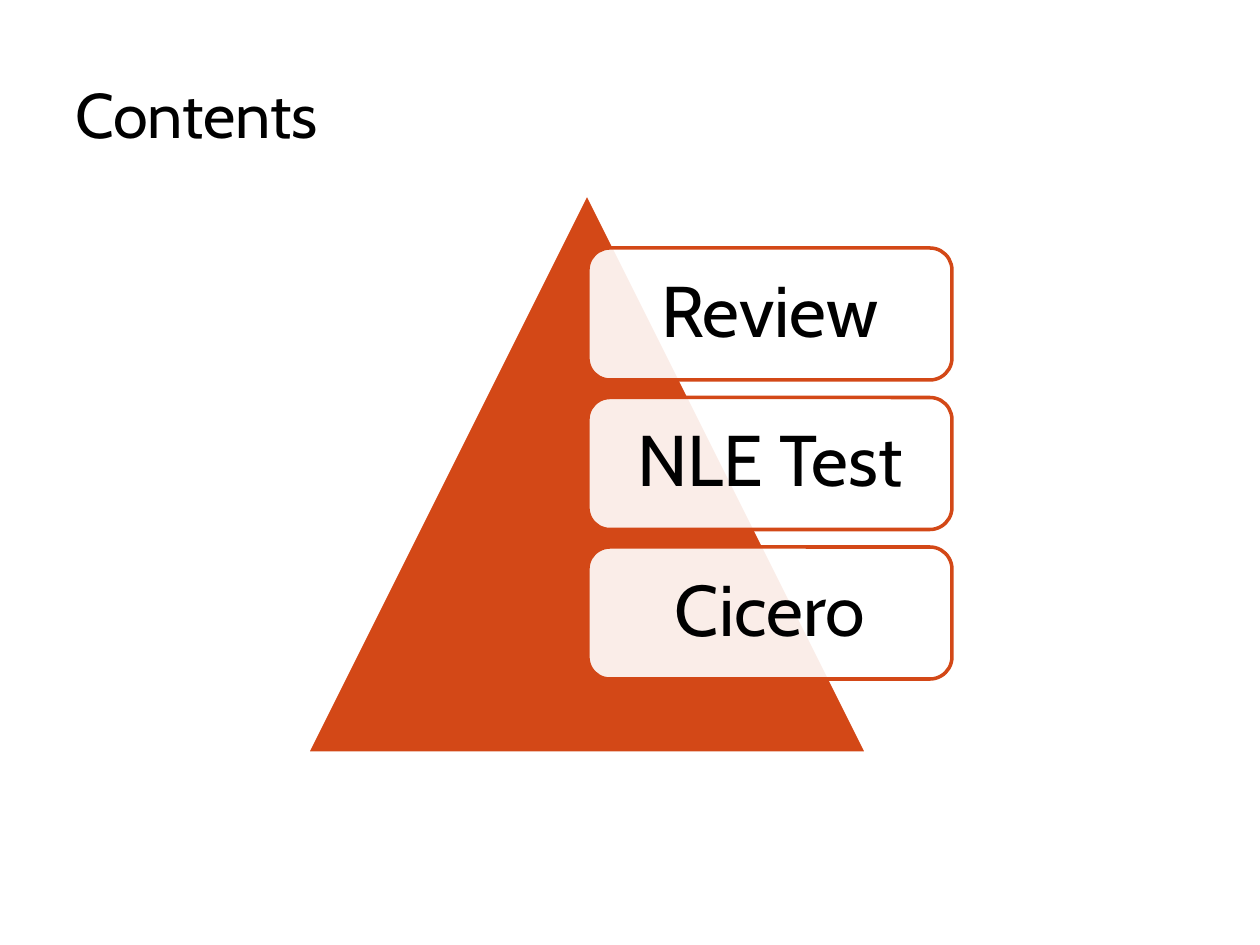
from dataclasses import dataclass

from lxml.etree import SubElement
from pptx import Presentation
from pptx.dml.color import RGBColor
from pptx.enum.shapes import MSO_SHAPE
from pptx.enum.text import MSO_ANCHOR, PP_ALIGN
from pptx.oxml.ns import qn
from pptx.util import Emu, Pt

TITLE = "Contents"
TOPICS = ["Review", "NLE Test", "Cicero"]

SLIDE_SIZE = (1260, 945)
TITLE_BOX = (63, 10, 935, 147)
TRIANGLE_BOX = (307, 193, 560, 560)
CARD_LEFT, CARD_WIDTH, CARD_HEIGHT = 588, 364, 132
CARDS_TOP, CARDS_BOTTOM = 248, 679
CARD_INSET = 28


@dataclass(frozen=True)
class Theme:
    font: str = "Cabin"
    text: RGBColor = RGBColor(0x00, 0x00, 0x00)
    paper: RGBColor = RGBColor(0xFF, 0xFF, 0xFF)
    accent: RGBColor = RGBColor(0xD3, 0x48, 0x17)
    title_size: int = 36
    topic_size: int = 41
    line_width: int = 2
    card_opacity: int = 90


THEME = Theme()


def px(length):
    return Emu(round(length * 914400 / 126))


def add_shape(slide, kind, box, fill, line):
    shape = slide.shapes.add_shape(kind, *map(px, box))
    shape.shadow.inherit = False
    shape.fill.solid()
    shape.fill.fore_color.rgb = fill
    shape.line.color.rgb = line
    shape.line.width = Pt(THEME.line_width)
    return shape


def set_opacity(shape, percent):
    color = shape.fill._xPr.find(qn("a:solidFill"))[0]
    SubElement(color, qn("a:alpha"), val=str(percent * 1000))


def write(shape, text, size, alignment, anchor):
    frame = shape.text_frame
    frame.word_wrap = True
    frame.vertical_anchor = anchor
    paragraph = frame.paragraphs[0]
    paragraph.alignment = alignment
    run = paragraph.add_run()
    run.text = text
    run.font.name = THEME.font
    run.font.size = Pt(size)
    run.font.color.rgb = THEME.text
    return frame


def add_card(slide, topic, top):
    box = (CARD_LEFT, top, CARD_WIDTH, CARD_HEIGHT)
    card = add_shape(slide, MSO_SHAPE.ROUNDED_RECTANGLE, box, THEME.paper, THEME.accent)
    set_opacity(card, THEME.card_opacity)
    frame = write(card, topic, THEME.topic_size, PP_ALIGN.CENTER, MSO_ANCHOR.MIDDLE)
    frame.margin_left = frame.margin_right = px(CARD_INSET)
    frame.margin_top = frame.margin_bottom = px(CARD_INSET)
    frame.paragraphs[0].line_spacing = 0.9


def main():
    presentation = Presentation()
    presentation.slide_width, presentation.slide_height = map(px, SLIDE_SIZE)
    slide = presentation.slides.add_slide(presentation.slide_layouts[6])

    title = slide.shapes.add_textbox(*map(px, TITLE_BOX))
    write(title, TITLE, THEME.title_size, PP_ALIGN.LEFT, MSO_ANCHOR.BOTTOM)

    add_shape(slide, MSO_SHAPE.ISOSCELES_TRIANGLE, TRIANGLE_BOX, THEME.accent, THEME.paper)

    pitch = (CARDS_BOTTOM - CARDS_TOP - CARD_HEIGHT) / (len(TOPICS) - 1)
    for index, topic in enumerate(TOPICS):
        add_card(slide, topic, CARDS_TOP + index * pitch)

    presentation.save("out.pptx")


if __name__ == "__main__":
    main()
